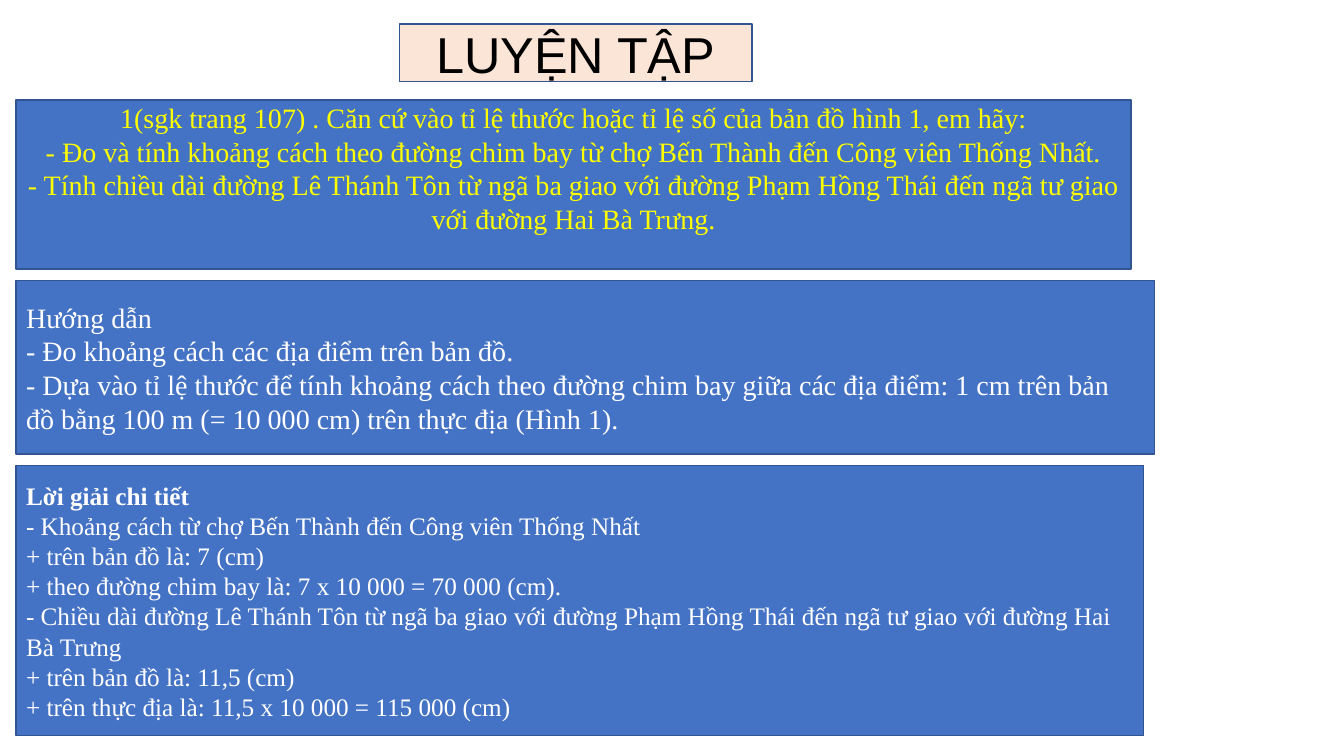
from pptx import Presentation
from pptx.dml.color import RGBColor
from pptx.enum import shapes, text
from pptx.util import Inches, Pt

# Content
TITLE = ["LUYỆN TẬP"]
EXERCISE = [
    "1(sgk trang 107) . Căn cứ vào tỉ lệ thước hoặc tỉ lệ số của bản đồ hình 1, em hãy:",
    "- Đo và tính khoảng cách theo đường chim bay từ chợ Bến Thành đến Công viên Thống Nhất.",
    "- Tính chiều dài đường Lê Thánh Tôn từ ngã ba giao với đường Phạm Hồng Thái đến ngã tư giao với đường Hai Bà Trưng.",
]
GUIDE = [
    "Hướng dẫn",
    "- Đo khoảng cách các địa điểm trên bản đồ.",
    "- Dựa vào tỉ lệ thước để tính khoảng cách theo đường chim bay giữa các địa điểm: 1 cm trên bản đồ bằng 100 m (= 10 000 cm) trên thực địa (Hình 1).",
]
SOLUTION = [
    "Lời giải chi tiết",
    "- Khoảng cách từ chợ Bến Thành đến Công viên Thống Nhất",
    "+ trên bản đồ là: 7 (cm)",
    "+ theo đường chim bay là: 7 x 10 000 = 70 000 (cm).",
    "- Chiều dài đường Lê Thánh Tôn từ ngã ba giao với đường Phạm Hồng Thái đến ngã tư giao với đường Hai Bà Trưng",
    "+ trên bản đồ là: 11,5 (cm)",
    "+ trên thực địa là: 11,5 x 10 000 = 115 000 (cm)",
]

# Theme
THEME = {
    "panel": "4472C4", "title_fill": "FBE5D6", "border": "325491",
    "title_text": "000000", "exercise_text": "FFFF00", "body_text": "FFFFFF",
    "title_font": "Arial", "body_font": "Times New Roman",
    "title_size": 36, "body_size": 20, "solution_size": 18,
}

# Layout in inches: the panels share a left edge and the gap between them
LEFT, TOP, GAP = 0.16, 0.99, 0.115
TITLE_BOX = (3.96, 0.24, 3.5, 0.57)
CENTER, START = text.PP_ALIGN.CENTER, text.PP_ALIGN.LEFT
PANELS = [
    {"lines": EXERCISE, "width": 11.06, "height": 1.68, "color": "exercise_text",
     "size": "body_size", "align": CENTER, "bottom": 0.38},
    {"lines": GUIDE, "width": 11.29, "height": 1.72, "color": "body_text",
     "size": "body_size", "align": START},
    {"lines": SOLUTION, "width": 11.18, "height": 2.68, "color": "body_text",
     "size": "solution_size", "align": START, "bold_heading": True},
]


def rgb(key):
    return RGBColor.from_string(THEME[key])


def add_panel(slide, box, lines, color, size, align, fill="panel",
              font="body_font", bottom=0.05, bold_heading=False):
    panel = slide.shapes.add_shape(
        shapes.MSO_SHAPE.RECTANGLE, *(Inches(length) for length in box))
    panel.shadow.inherit = False
    panel.fill.solid()
    panel.fill.fore_color.rgb = rgb(fill)
    panel.line.color.rgb = rgb("border")
    panel.line.width = Pt(1)

    frame = panel.text_frame
    frame_format = {"word_wrap": True, "vertical_anchor": text.MSO_ANCHOR.MIDDLE,
                    "margin_bottom": Inches(bottom)}
    for name, value in frame_format.items():
        setattr(frame, name, value)

    for index, line in enumerate(lines):
        paragraph = frame.paragraphs[0] if index == 0 else frame.add_paragraph()
        paragraph.alignment = align
        run = paragraph.add_run()
        run.text = line
        run_format = {"name": THEME[font], "size": Pt(THEME[size]),
                      "bold": bold_heading and index == 0}
        for name, value in run_format.items():
            setattr(run.font, name, value)
        run.font.color.rgb = rgb(color)


def main():
    deck = Presentation()
    deck.slide_width, deck.slide_height = Inches(13.33), Inches(7.5)
    slide = deck.slides.add_slide(deck.slide_layouts[6])

    # Title
    add_panel(slide, TITLE_BOX, TITLE, "title_text", "title_size", CENTER,
              fill="title_fill", font="title_font")

    # Exercise, guide and solution, stacked downwards
    top = TOP
    for panel in PANELS:
        style = dict(panel)
        width, height = style.pop("width"), style.pop("height")
        add_panel(slide, (LEFT, top, width, height), **style)
        top += height + GAP

    deck.save("out.pptx")


if __name__ == "__main__":
    main()
